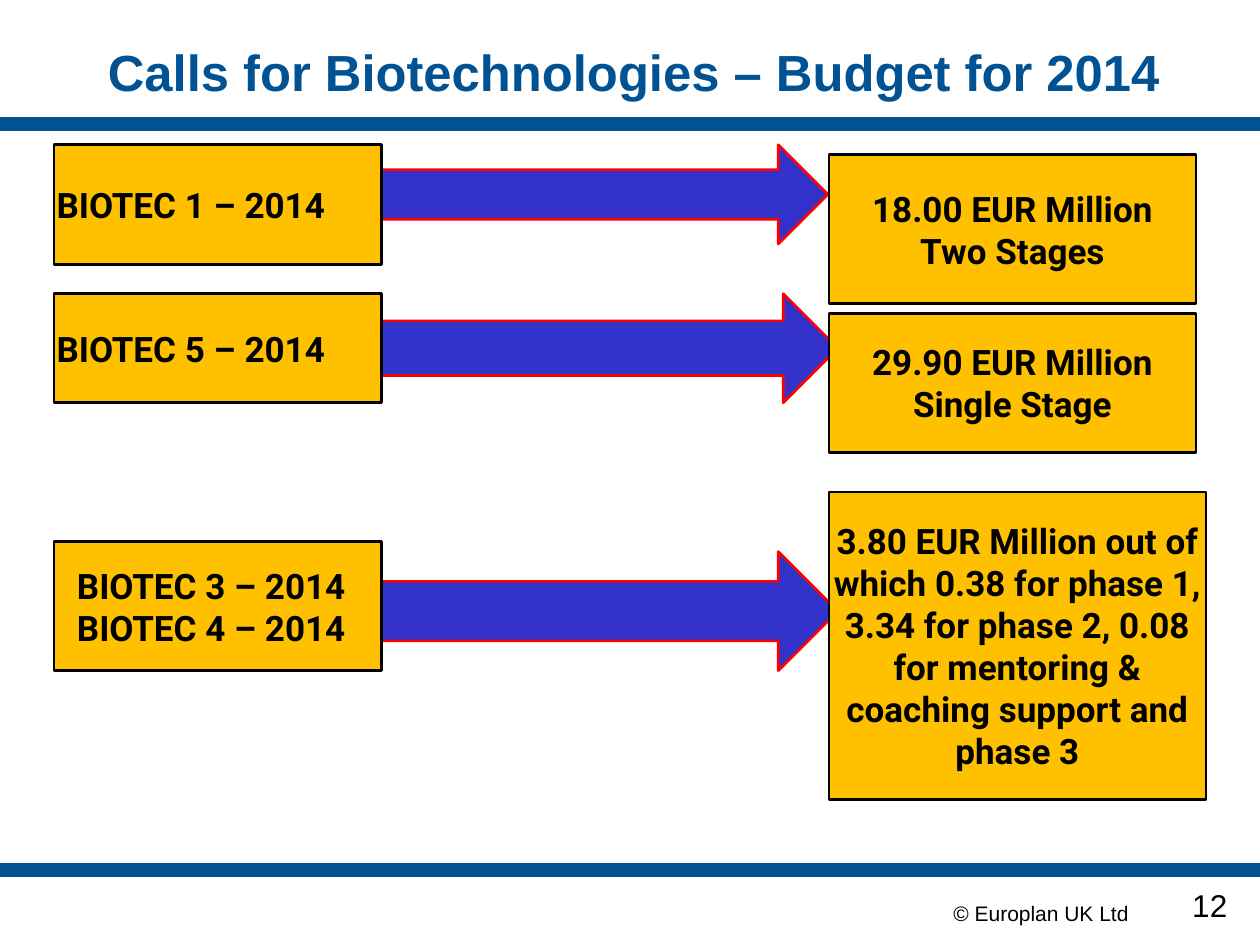
from dataclasses import dataclass

from lxml import etree
from pptx import Presentation
from pptx.dml.color import RGBColor
from pptx.enum.shapes import MSO_CONNECTOR, MSO_SHAPE
from pptx.enum.text import MSO_ANCHOR, MSO_AUTO_SIZE, PP_ALIGN
from pptx.oxml.ns import qn
from pptx.util import Cm, Pt

RECTANGLE, RIGHT_ARROW = MSO_SHAPE.RECTANGLE, MSO_SHAPE.RIGHT_ARROW
STRAIGHT = MSO_CONNECTOR.STRAIGHT
MIDDLE, TOP = MSO_ANCHOR.MIDDLE, MSO_ANCHOR.TOP
LEFT, CENTER, RIGHT, JUSTIFY = PP_ALIGN.LEFT, PP_ALIGN.CENTER, PP_ALIGN.RIGHT, PP_ALIGN.JUSTIFY
FIXED = MSO_AUTO_SIZE.NONE

NAVY, BLUE, RED, AMBER, BLACK = "005293", "3333CC", "FF0000", "FFC000", "000000"
TOPIC_LEFT, TOPIC_WIDTH, BUDGET_LEFT = 1.09, 6.6, 16.71
ARROW_LEFT = TOPIC_LEFT + TOPIC_WIDTH

TITLE_FONT = {"name": "Arial", "size": Pt(29), "bold": True}
BOX_FONT = {"name": "Roboto", "size": Pt(20), "bold": True}
CREDIT_FONT = {"name": "Arial", "size": Pt(12), "bold": False}
NUMBER_FONT = {"name": "Arial", "size": Pt(18), "bold": False}
BOX_FRAME = {"word_wrap": True, "vertical_anchor": MIDDLE, "margin_left": Cm(0.05),
             "margin_right": Cm(0.05), "margin_top": 0, "margin_bottom": 0}


@dataclass
class Area:
    left: float
    top: float
    width: float
    height: float

    def lengths(self) -> tuple:
        return Cm(self.left), Cm(self.top), Cm(self.width), Cm(self.height)


@dataclass
class Call:
    topics: list[str]
    topic_align: PP_ALIGN
    topic_right_margin: float
    topic_area: Area
    arrow_area: Area
    budget: list[str]
    budget_area: Area


CALLS = [
    Call(["BIOTEC 1 – 2014"], JUSTIFY, 0.05,
         Area(TOPIC_LEFT, 2.92, TOPIC_WIDTH, 2.41), Area(ARROW_LEFT, 2.92, 9, 2),
         ["18.00 EUR Million", "Two Stages"], Area(BUDGET_LEFT, 3.12, 7.4, 3)),
    Call(["BIOTEC 5 – 2014"], JUSTIFY, 0.05,
         Area(TOPIC_LEFT, 5.92, TOPIC_WIDTH, 2.2), Area(ARROW_LEFT, 5.92, 9.2, 2.2),
         ["29.90 EUR Million", "Single Stage"], Area(BUDGET_LEFT, 6.32, 7.4, 2.8)),
    Call(["BIOTEC 3 – 2014", "BIOTEC 4 – 2014"], CENTER, 0.31,
         Area(TOPIC_LEFT, 10.92, TOPIC_WIDTH, 2.6), Area(ARROW_LEFT, 11.12, 9.2, 2.4),
         ["3.80 EUR Million out of which 0.38 for phase 1, 3.34 for phase 2, "
          "0.08 for mentoring & coaching support and phase 3"],
         Area(BUDGET_LEFT, 9.92, 7.6, 6.2)),
]


def color(hex_code: str) -> RGBColor:
    return RGBColor.from_string(hex_code)


def apply_format(target, values: dict) -> None:
    for attribute, value in values.items():
        setattr(target, attribute, value)


def write(frame, lines: list[str], align: PP_ALIGN, font: dict, ink: str, layout: dict) -> None:
    apply_format(frame, layout)
    frame.text = "\n".join(lines)
    for paragraph in frame.paragraphs:
        paragraph.alignment = align
        apply_format(paragraph.font, font)
        paragraph.font.color.rgb = color(ink)


def add_block(slide, kind: MSO_SHAPE, area: Area, fill: str, outline: str):
    block = slide.shapes.add_shape(kind, *area.lengths())
    block.shadow.inherit = False
    block.fill.solid()
    block.fill.fore_color.rgb = color(fill)
    block.line.color.rgb = color(outline)
    block.line.width = Pt(1.5)
    return block


def add_box(slide, area: Area, lines: list[str], align: PP_ALIGN, right_margin: float = 0.05) -> None:
    box = add_block(slide, RECTANGLE, area, AMBER, BLACK)
    write(box.text_frame, lines, align, BOX_FONT, BLACK,
          BOX_FRAME | {"margin_right": Cm(right_margin)})


def add_rule(slide, top: float) -> None:
    rule = slide.shapes.add_connector(STRAIGHT, 0, Cm(top), Cm(25.4), Cm(top))
    rule.line.color.rgb = color(NAVY)
    rule.line.width = Pt(8)
    etree.SubElement(rule._element.spPr, qn("a:effectLst"))


def add_note(slide, area: Area, line: str, align: PP_ALIGN, font: dict, wrap: bool) -> None:
    note = slide.shapes.add_textbox(*area.lengths())
    write(note.text_frame, [line], align, font, BLACK,
          {"word_wrap": wrap, "vertical_anchor": TOP})


def main() -> None:
    deck = Presentation()
    deck.slide_width, deck.slide_height = Cm(25.4), Cm(19.05)
    slide = deck.slides.add_slide(deck.slide_layouts[5])

    title = slide.shapes.title
    title.left, title.top, title.width, title.height = Area(0.69, 0.53, 24.2, 1.83).lengths()
    write(title.text_frame, ["Calls for Biotechnologies – Budget for 2014"], CENTER,
          TITLE_FONT, NAVY, {"word_wrap": True, "vertical_anchor": MIDDLE, "auto_size": FIXED})

    for top in (2.51, 17.53):
        add_rule(slide, top)
    add_note(slide, Area(18.97, 18.03, 4.04, 0.76), "© Europlan UK Ltd", LEFT, CREDIT_FONT, False)
    add_note(slide, Area(19.71, 17.73, 5.28, 1.07), "12", RIGHT, NUMBER_FONT, True)

    for call in CALLS:
        add_block(slide, RIGHT_ARROW, call.arrow_area, BLUE, RED)
        add_box(slide, call.topic_area, call.topics, call.topic_align, call.topic_right_margin)
        add_box(slide, call.budget_area, call.budget, CENTER)

    deck.save("out.pptx")


if __name__ == "__main__":
    main()
